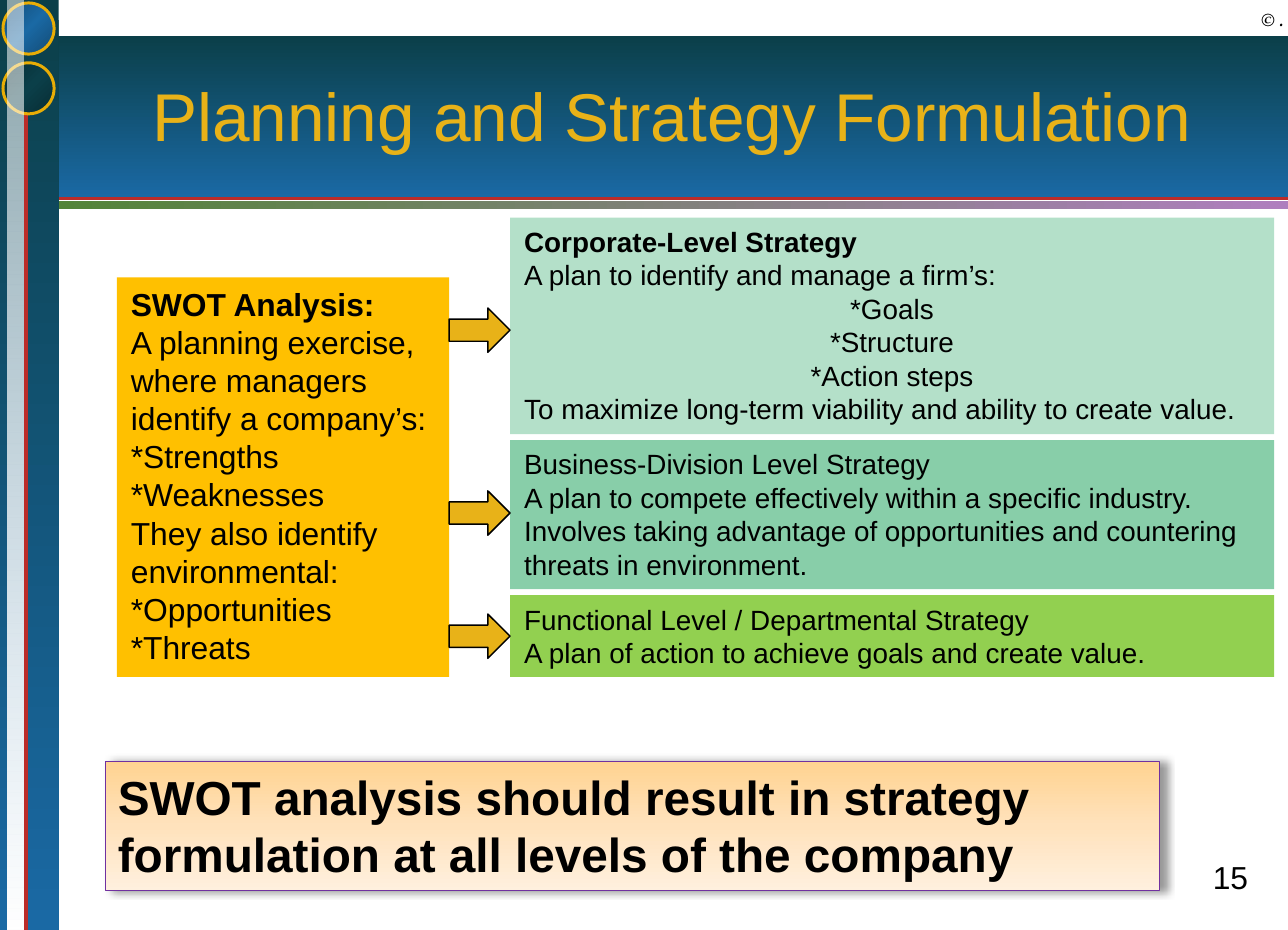
from dataclasses import dataclass

from lxml import etree
from pptx import Presentation
from pptx import util as u
from pptx.dml.color import RGBColor
from pptx.enum import shapes, text
from pptx.oxml.ns import qn

Pt = u.Pt
Kind = shapes.MSO_SHAPE
Align = text.PP_ALIGN
Anchor = text.MSO_ANCHOR


@dataclass
class Theme:
    """Hold the colours, fonts and type sizes."""
    font: str = "Arial"
    serif: str = "TeX Gyre Pagella"
    black: str = "000000"
    white: str = "FFFFFF"
    gold: str = "E8B218"
    ring: str = "E8AD06"
    red: str = "BB2C29"
    edge: str = "7030A0"
    amber: str = "FFC000"
    mint: str = "B4E0C9"
    jade: str = "88CEA9"
    lime: str = "92D050"
    band: tuple = ("0B3F49", "1A69A4")
    strip: tuple = ("538438", "AF7EBE")
    blue: tuple = ("134B75", "1A69A4", "134B75")
    teal: tuple = ("082D34", "0B3F49", "082D34")
    peach: tuple = ("FFD391", "FFE2BC", "FFF0DE")
    head: int = 34
    claim: int = 24
    body: int = 16
    small: int = 14
    note: int = 9


def add(root, tag, **keys):
    """Append one drawing element and return it."""
    return etree.SubElement(root, qn(tag), {k: str(v) for k, v in keys.items()})


def cast(root, tint, dist, blur=0, turn=45, alpha=100):
    """Append an outer shadow to a shape or run."""
    fx = add(root, "a:effectLst")
    shade = add(fx, "a:outerShdw", blurRad=Pt(blur), dist=Pt(dist),
                dir=turn * 60000, algn="tl", rotWithShape=0)
    add(add(shade, "a:srgbClr", val=tint), "a:alpha", val=alpha * 1000)


def write(frame, lines, size, font, tint, bold=False, slant=False, lead=False,
          align=Align.LEFT, mid=(), anchor=Anchor.TOP, pad=(7.2, 3.6), wrap=True):
    """Fill a text frame; lead makes line one bold, mid lists centred lines."""
    frame.word_wrap = wrap
    frame.auto_size = text.MSO_AUTO_SIZE.NONE
    frame.vertical_anchor = anchor
    frame.margin_left = frame.margin_right = Pt(pad[0])
    frame.margin_top = frame.margin_bottom = Pt(pad[1])
    for i, line in enumerate(lines):
        para = frame.paragraphs[0] if i == 0 else frame.add_paragraph()
        para.alignment = Align.CENTER if i in mid else align
        run = para.add_run()
        run.text = line
        run.font.size, run.font.name = Pt(size), font
        run.font.bold = bold or (lead and i == 0)
        run.font.italic = slant
        run.font.color.rgb = RGBColor.from_string(tint)


class Deck:
    """Hold the style and the current slide."""

    def __init__(self, theme):
        """Start a deck with one title-only slide."""
        self.theme = theme
        self.file = Presentation()
        self.file.slide_width, self.file.slide_height = Pt(648), Pt(468)
        self.slide = self.file.slides.add_slide(self.file.slide_layouts[5])

    def blend(self, shape, tints, angle, clear=None):
        """Give a shape an even gradient; clear is the first stop's alpha."""
        shape.fill.gradient()
        grad = shape._element.spPr.find(qn("a:gradFill"))
        stops = grad.find(qn("a:gsLst"))
        for stop in list(stops):
            stops.remove(stop)
        for i, tint in enumerate(tints):
            stop = add(stops, "a:gs", pos=100000 * i // (len(tints) - 1))
            clr = add(stop, "a:srgbClr", val=tint)
            if clear and i == 0:
                add(clr, "a:alpha", val=clear * 1000)
        grad.find(qn("a:lin")).set("ang", str(angle * 60000))

    def shape(self, x, y, w, h, fill, kind=Kind.RECTANGLE, line=None,
              width=0.75, angle=90, clear=None):
        """Draw a preset shape with a plain or gradient fill."""
        item = self.slide.shapes.add_shape(kind, Pt(x), Pt(y), Pt(w), Pt(h))
        item.shadow.inherit = False
        if isinstance(fill, tuple):
            self.blend(item, fill, angle, clear)
        else:
            item.fill.solid()
            item.fill.fore_color.rgb = RGBColor.from_string(fill)
        if line:
            item.line.color.rgb = RGBColor.from_string(line)
            item.line.width = Pt(width)
        else:
            item.line.fill.background()
        return item

    def rule(self, x, y, x2, y2, width):
        """Draw a straight red line."""
        item = self.slide.shapes.add_connector(
            shapes.MSO_CONNECTOR.STRAIGHT, Pt(x), Pt(y), Pt(x2), Pt(y2))
        item.line.color.rgb = RGBColor.from_string(self.theme.red)
        item.line.width = Pt(width)
        add(item._element.spPr, "a:effectLst")

    def box(self, x, y, w, h, fill, lines, size, **form):
        """Draw a filled box with text."""
        item = self.shape(x, y, w, h, fill)
        write(item.text_frame, lines, size, self.theme.font, self.theme.black, **form)
        return item

    def label(self, x, y, w, h, line, size, font, **form):
        """Place a right-aligned text box."""
        item = self.slide.shapes.add_textbox(Pt(x), Pt(y), Pt(w), Pt(h))
        write(item.text_frame, [line], size, font, self.theme.black,
              align=Align.RIGHT, **form)

    def title(self, line):
        """Bring the title to the front and fill it with a hard shadow."""
        item = self.slide.shapes.title
        self.slide.shapes._spTree.append(item._element)
        item.left, item.top, item.width, item.height = Pt(28), Pt(18.7), Pt(620), Pt(77.8)
        write(item.text_frame, [line], self.theme.head, self.theme.font, self.theme.gold,
              align=Align.CENTER, anchor=Anchor.MIDDLE, pad=(6.5, 3.2))
        props = item.text_frame.paragraphs[0].runs[0]._r.rPr
        cast(props, self.theme.black, 2.5)
        props.insert(1, props[-1])

    def frame(self):
        """Draw the header band, side bar and rings."""
        look = self.theme
        self.shape(28, 101.3, 620, 3.8, look.strip, angle=0)
        self.shape(0, 18, 648, 81.4, look.band)
        self.rule(28, 100, 648, 100, 1.5)
        self.shape(0, 0, 29.5, 468, look.band)
        self.rule(13, 57, 13, 468, 2.25)
        for y, tints in ((31.6, look.teal), (1.5, look.blue)):
            self.shape(1.5, y, 25.7, 25.7, tints, Kind.OVAL, look.ring, 1.5, 45)
        self.shape(3.6, 0, 8.2, 468, (look.white, look.white), clear=52)


def main():
    """Build the slide and save it."""
    look = Theme()
    deck = Deck(look)
    deck.frame()
    deck.title("Planning and Strategy Formulation")
    deck.label(578, 428, 57, 26.6, "15", look.body, look.font)
    deck.label(634.3, 4.3, 11.5, 10.8, "© .", look.note, look.serif, bold=True,
               slant=True, anchor=Anchor.BOTTOM, pad=(0, 0), wrap=False)

    claim = deck.box(
        53, 383.2, 530.4, 65, look.peach,
        ["SWOT analysis should result in strategy formulation at all levels of the company"],
        look.claim, bold=True, pad=(6.3, 3.2))
    claim.line.color.rgb = RGBColor.from_string(look.edge)
    claim.line.width = Pt(0.75)
    props = claim._element.spPr
    props.remove(props.find(qn("a:effectLst")))
    cast(props, look.black, 3, blur=4, turn=0, alpha=40)

    deck.box(58.8, 139.6, 167.2, 201, look.amber,
             ["SWOT Analysis:", "A planning exercise, where managers identify a company’s:",
              "*Strengths", "*Weaknesses", "They also identify environmental:",
              "*Opportunities", "*Threats"], look.body, lead=True)

    levels = [
        (109.5, 109, 155, look.mint, True, (2, 3, 4),
         ["Corporate-Level Strategy", "A plan to identify and manage a firm’s:",
          "*Goals", "*Structure", "*Action steps",
          "To maximize long-term viability and ability to create value."]),
        (221.5, 75, 247, look.jade, False, (),
         ["Business-Division Level Strategy",
          "A plan to compete effectively within a specific industry. Involves taking "
          "advantage of opportunities and countering threats in environment."]),
        (299.5, 41.2, 309, look.lime, False, (),
         ["Functional Level / Departmental Strategy",
          "A plan of action to achieve goals and create value."]),
    ]
    for y, h, tip, fill, lead, mid, lines in levels:
        deck.box(256.6, y, 384.4, h, fill, lines, look.small, lead=lead, mid=mid)
        deck.shape(226, tip, 30.6, 22.3, look.gold, Kind.RIGHT_ARROW, look.black)
    deck.file.save("out.pptx")


if __name__ == "__main__":
    main()
